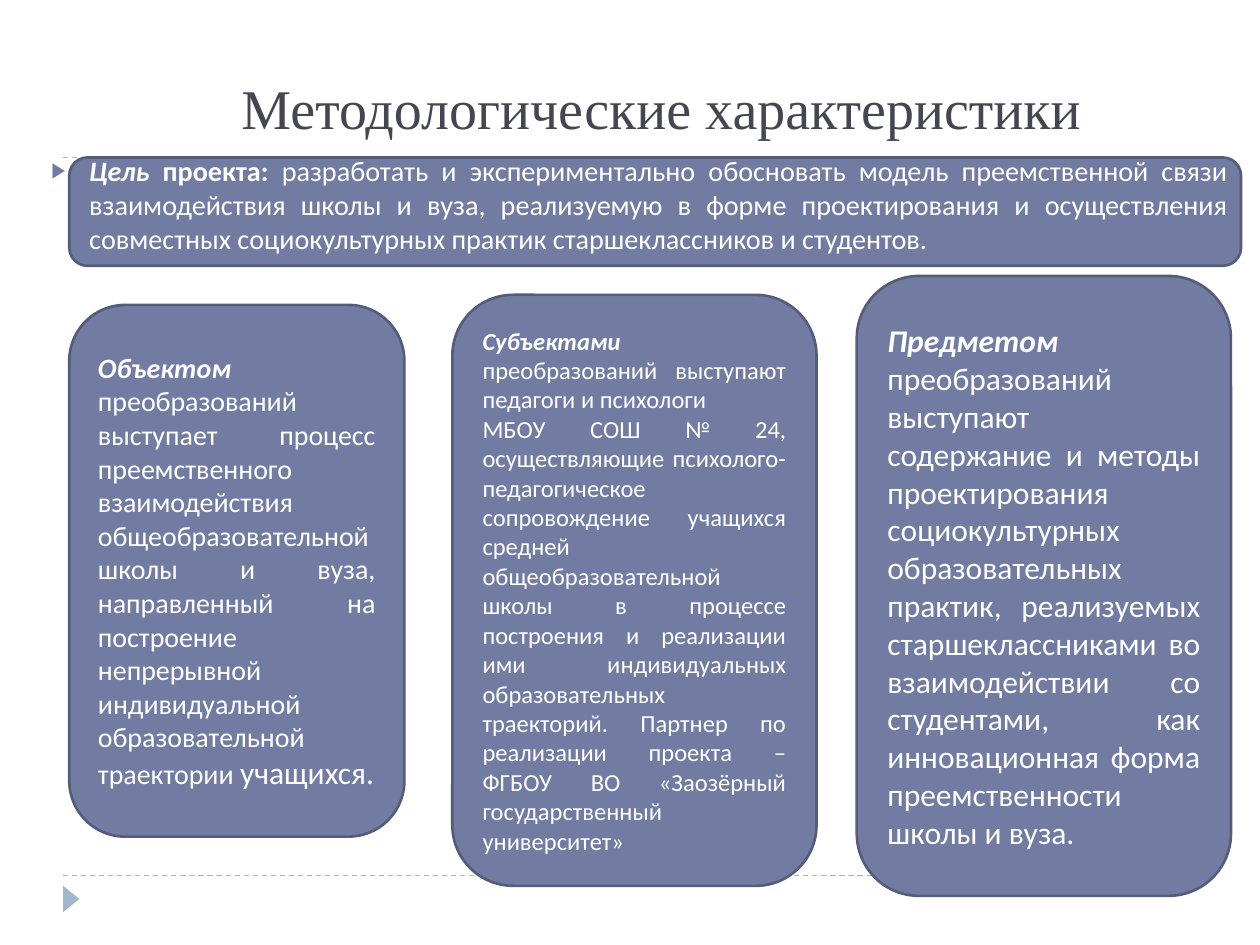
from dataclasses import dataclass

from lxml import etree
from pptx import Presentation
from pptx.dml.color import RGBColor
from pptx.enum.dml import MSO_LINE
from pptx.enum.shapes import MSO_CONNECTOR, MSO_SHAPE
from pptx.enum.text import MSO_ANCHOR, PP_ALIGN
from pptx.oxml.ns import qn
from pptx.util import Inches, Length, Pt

STRAIGHT = MSO_CONNECTOR.STRAIGHT
DASH = MSO_LINE.DASH
ROUNDED = MSO_SHAPE.ROUNDED_RECTANGLE
TRIANGLE = MSO_SHAPE.ISOSCELES_TRIANGLE
MIDDLE, BOTTOM, TOP = MSO_ANCHOR.MIDDLE, MSO_ANCHOR.BOTTOM, MSO_ANCHOR.TOP
JUSTIFY, CENTER = PP_ALIGN.JUSTIFY, PP_ALIGN.CENTER

COLORS = {
    "panel": "727CA3",
    "border": "545C79",
    "accent": "9FB8CD",
    "title": "464653",
    "text": "FFFFFF",
}
COLUMNS, ROWS = 100, 75
WIDTH, HEIGHT = Inches(10), Inches(7.5)
RULE_ROWS = (12.5, 69.5)


@dataclass(frozen=True)
class Area:
    """Place on the slide, in grid columns and rows."""
    column: float
    row: float
    columns: float
    rows: float

    def lengths(self) -> tuple[Length, Length, Length, Length]:
        return across(self.column), down(self.row), across(self.columns), down(self.rows)


@dataclass(frozen=True)
class Span:
    text: str
    size: float
    bold: bool = False
    italic: bool = False
    font: str = "Calibri"
    color: str = "text"


@dataclass(frozen=True)
class Panel:
    area: Area
    paragraphs: tuple[tuple[Span, ...], ...] = ()


TITLE = Span("Методологические характеристики", 32, font="Times New Roman", color="title")
GOAL = (
    Span("Цель", 16.1, bold=True, italic=True),
    Span(" проекта: ", 16.1, bold=True),
    Span("разработать и экспериментально обосновать модель преемственной связи "
         "взаимодействия школы и вуза, реализуемую в форме проектирования и осуществления "
         "совместных социокультурных практик старшеклассников и студентов.", 16.1),
)
PANELS = (
    Panel(Area(5.5, 12.5, 93, 8.6)),
    Panel(Area(5.5, 24.2, 26.6, 42.2), ((
        Span("Объектом ", 16, bold=True, italic=True),
        Span("преобразований выступает процесс преемственного взаимодействия "
             "общеобразовательной школы и вуза, направленный на построение непрерывной "
             "индивидуальной образовательной траектории ", 16),
        Span("учащихся.", 18),
    ),)),
    Panel(Area(35.9, 23.4, 28.9, 46.9), (
        (
            Span("Субъектами ", 14, bold=True, italic=True),
            Span("преобразований выступают педагоги и психологи ", 14),
        ),
        (
            Span("МБОУ СОШ № 24, осуществляющие психолого-педагогическое сопровождение "
                 "учащихся средней общеобразовательной школы в процессе построения и "
                 "реализации ими индивидуальных образовательных траекторий. Партнер по "
                 "реализации проекта – ФГБОУ ВО «Заозёрный государственный университет»", 14),
        ),
    )),
    Panel(Area(68, 21.9, 29.7, 49.2), ((
        Span("Предметом ", 18, bold=True, italic=True),
        Span("преобразований выступают содержание и методы проектирования "
             "социокультурных образовательных практик, реализуемых старшеклассниками во "
             "взаимодействии со студентами, как инновационная форма преемственности "
             "школы и вуза.", 18),
    ),)),
)


def across(columns: float) -> Length:
    return Length(round(WIDTH * columns / COLUMNS))


def down(rows: float) -> Length:
    return Length(round(HEIGHT * rows / ROWS))


def rgb(name: str) -> RGBColor:
    return RGBColor.from_string(COLORS[name])


def add_spans(para, spans: tuple[Span, ...], alignment) -> None:
    para.alignment = alignment
    for span in spans:
        run = para.add_run()
        run.text = span.text
        font = run.font
        font.name, font.size = span.font, Pt(span.size)
        font.bold, font.italic = span.bold, span.italic
        font.color.rgb = rgb(span.color)


def add_rule(page, row: float) -> None:
    rule = page.shapes.add_connector(STRAIGHT, across(5), down(row), across(95), down(row))
    rule.line.color.rgb = rgb("accent")
    rule.line.width = Pt(0.75)
    rule.line.dash_style = DASH
    etree.SubElement(rule._element.spPr, qn("a:effectLst"))


def add_filled(page, kind, area: Area, fill: str):
    shape = page.shapes.add_shape(kind, *area.lengths())
    shape.shadow.inherit = False
    shape.fill.solid()
    shape.fill.fore_color.rgb = rgb(fill)
    return shape


def add_panel(page, panel: Panel) -> None:
    shape = add_filled(page, ROUNDED, panel.area, "panel")
    shape.line.color.rgb = rgb("border")
    shape.line.width = Pt(1.5)
    frame = shape.text_frame
    frame.word_wrap = True
    frame.vertical_anchor = MIDDLE
    for index, spans in enumerate(panel.paragraphs):
        para = frame.add_paragraph() if index else frame.paragraphs[0]
        add_spans(para, spans, JUSTIFY)


def add_text(page, area: Area, spans: tuple[Span, ...], alignment, anchor):
    box = page.shapes.add_textbox(*area.lengths())
    frame = box.text_frame
    frame.word_wrap = True
    frame.vertical_anchor = anchor
    para = frame.paragraphs[0]
    add_spans(para, spans, alignment)
    return para


def add_bullet(para, symbol: str, indent: Length) -> None:
    para.space_before = Pt(6)
    properties = para._p.get_or_add_pPr()
    properties.set("marL", str(indent))
    properties.set("indent", str(-indent))
    color = etree.SubElement(properties, qn("a:buClr"))
    etree.SubElement(color, qn("a:srgbClr"), val=COLORS["panel"])
    etree.SubElement(properties, qn("a:buSzPct"), val="76000")
    etree.SubElement(properties, qn("a:buFont"), typeface="Calibri")
    etree.SubElement(properties, qn("a:buChar"), char=symbol)


def main() -> None:
    deck = Presentation()
    deck.slide_width, deck.slide_height = WIDTH, HEIGHT
    page = deck.slides.add_slide(deck.slide_layouts[6])

    for row in RULE_ROWS:
        add_rule(page, row)
    marker = add_filled(page, TRIANGLE, Area(4.6, 70.7, 2.1, 1.3), "accent")
    marker.line.fill.background()
    marker.rotation = 90

    goal_panel, *columns = PANELS
    add_panel(page, goal_panel)
    add_text(page, Area(10, 3, 85, 8.7), (TITLE,), CENTER, BOTTOM)
    goal = add_text(page, Area(3.1, 11.7, 95.3, 9.4), GOAL, JUSTIFY, TOP)
    add_bullet(goal, "▶", across(3))
    for panel in columns:
        add_panel(page, panel)

    deck.save("out.pptx")


if __name__ == "__main__":
    main()
